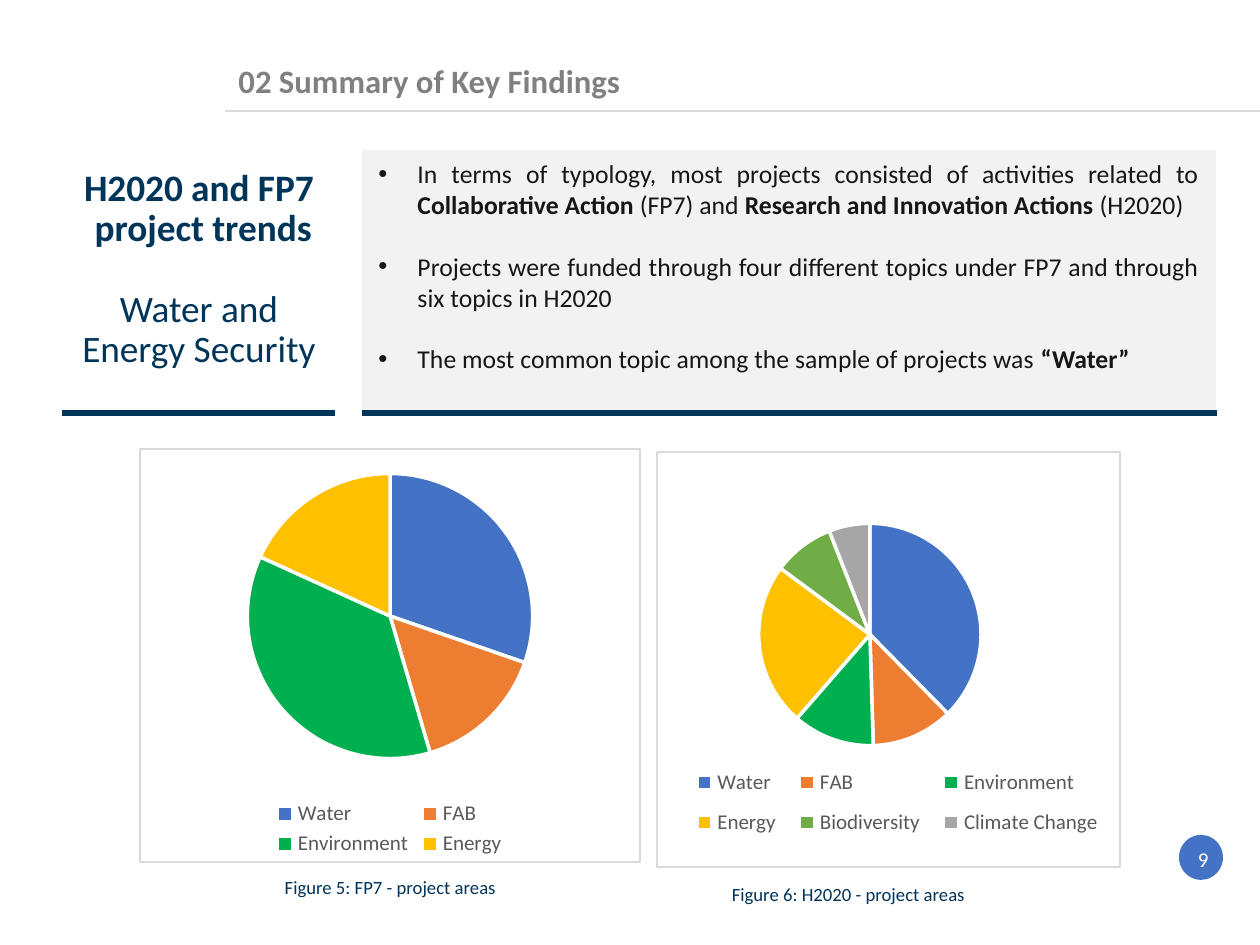
from dataclasses import dataclass

from lxml import etree
from pptx import Presentation
from pptx import util as u
from pptx.chart.data import CategoryChartData
from pptx.dml.color import RGBColor
from pptx.enum import chart as charts, shapes, text
from pptx.oxml import parse_xml
from pptx.oxml.ns import nsdecls, qn

EMU_PER_PX = 914400 / 168


@dataclass(frozen=True)
class Theme:
    font: str = "Calibri"
    navy: str = "00355A"
    caption_ink: str = "00345A"
    heading_ink: str = "808080"
    body_ink: str = "171616"
    legend_ink: str = "595959"
    panel: str = "F2F2F2"
    hairline: str = "D9D9D9"
    white: str = "FFFFFF"
    badge: str = "4472C4"
    slices: tuple = ("4472C4", "ED7D31", "00B050", "FFC000", "70AD47", "A6A6A6")
    heading_size: int = 14
    topic_size: int = 16
    body_size: int = 11
    number_size: int = 9
    legend_size: int = 9
    caption_size: int = 8


def px(length):
    return u.Emu(round(length * EMU_PER_PX))


class SlideBuilder:
    def __init__(self, slide, theme):
        self.slide = slide
        self.theme = theme

    def style(self, font, size, color, bold=False):
        font.name, font.size, font.bold = self.theme.font, u.Pt(size), bold
        font.color.rgb = RGBColor.from_string(color)

    def line(self, x1, y1, x2, y2, color, width):
        rule = self.slide.shapes.add_connector(
            shapes.MSO_CONNECTOR.STRAIGHT, px(x1), px(y1), px(x2), px(y2))
        rule.line.color.rgb = RGBColor.from_string(color)
        rule.line.width = u.Pt(width)
        etree.SubElement(rule._element.spPr, qn("a:effectLst"))

    def shape(self, kind, box, fill):
        shape = self.slide.shapes.add_shape(kind, *map(px, box))
        shape.shadow.inherit = False
        shape.fill.solid()
        shape.fill.fore_color.rgb = RGBColor.from_string(fill)
        shape.line.fill.background()
        return shape

    def label(self, box, paragraphs, size, color, align=text.PP_ALIGN.CENTER,
              anchor=text.MSO_ANCHOR.TOP, spacing=1.0, gap=0):
        """Each paragraph is a (wording, bold) pair."""
        frame = self.slide.shapes.add_textbox(*map(px, box)).text_frame
        frame.word_wrap = True
        frame.vertical_anchor = anchor
        for i, (wording, bold) in enumerate(paragraphs):
            para = frame.add_paragraph() if i else frame.paragraphs[0]
            para.text = wording
            para.alignment, para.line_spacing = align, spacing
            if i:
                para.space_before = u.Pt(gap)
            for run in para.runs:
                self.style(run.font, size, color, bold)

    def bullet_panel(self, box, bullets, gap):
        """Every second piece of a bullet is bold."""
        panel = self.shape(shapes.MSO_SHAPE.RECTANGLE, box, self.theme.panel)
        frame = panel.text_frame
        frame.word_wrap = True
        frame.vertical_anchor = text.MSO_ANCHOR.TOP
        for i, pieces in enumerate(bullets):
            para = frame.add_paragraph() if i else frame.paragraphs[0]
            para.alignment = text.PP_ALIGN.JUSTIFY
            if i:
                para.space_before = u.Pt(gap)
            props = para._p.get_or_add_pPr()
            props.set("marL", str(px(39)))
            props.set("indent", str(-px(39)))
            etree.SubElement(props, qn("a:buFont")).set("typeface", "Arial")
            etree.SubElement(props, qn("a:buChar")).set("char", "•")
            self.style(para.font, self.theme.body_size, self.theme.body_ink)
            for j, piece in enumerate(pieces):
                run = para.add_run()
                run.text = piece
                self.style(run.font, self.theme.body_size, self.theme.body_ink, j % 2 == 1)

    def place(self, part, area, index, target=""):
        """Fix a chart part at fractions (x, y, w, h) of the chart."""
        for old in part.findall(qn("c:layout")):
            part.remove(old)
        sizes = "".join(f'<c:{k} val="{v}"/>' for k, v in zip("xywh", area))
        part.insert(index, parse_xml(
            f'<c:layout {nsdecls("c")}><c:manualLayout>{target}'
            f'<c:xMode val="edge"/><c:yMode val="edge"/>{sizes}'
            '</c:manualLayout></c:layout>'))

    def pie(self, box, shares, plot_area, legend_area):
        theme = self.theme
        data = CategoryChartData()
        data.categories = list(shares)
        data.add_series("Series 1", list(shares.values()))
        chart = self.slide.shapes.add_chart(
            charts.XL_CHART_TYPE.PIE, *map(px, box), data).chart
        chart.has_title = False
        self.style(chart.font, theme.legend_size, theme.legend_ink)
        for i, color in enumerate(theme.slices[:len(shares)]):
            wedge = chart.plots[0].series[0].points[i].format
            wedge.fill.solid()
            wedge.fill.fore_color.rgb = RGBColor.from_string(color)
            wedge.line.color.rgb = RGBColor.from_string(theme.white)
            wedge.line.width = u.Pt(1.5)

        chart.has_legend = True
        legend = chart.legend
        legend.position = charts.XL_LEGEND_POSITION.BOTTOM
        legend.include_in_layout = False
        self.style(legend.font, theme.legend_size, theme.legend_ink)
        self.place(legend._element, legend_area, 1)
        self.place(chart._chartSpace.chart.plotArea, plot_area, 0,
                   '<c:layoutTarget val="inner"/>')

        # Frame round the chart
        chart._chartSpace.find(qn("c:txPr")).addprevious(parse_xml(
            f'<c:spPr {nsdecls("c", "a")}>'
            f'<a:solidFill><a:srgbClr val="{theme.white}"/></a:solidFill>'
            f'<a:ln w="{u.Pt(0.75)}"><a:solidFill><a:srgbClr val="{theme.hairline}"/>'
            '</a:solidFill></a:ln></c:spPr>'))


def main():
    theme = Theme()
    deck = Presentation()
    deck.slide_width, deck.slide_height = px(1260), px(945)
    page = SlideBuilder(deck.slides.add_slide(deck.slide_layouts[6]), theme)

    # Heading
    page.line(225, 111, 1260, 111, theme.hairline, 0.5)
    page.label((222, 58, 592, 50), [("02 Summary of Key Findings", True)],
               theme.heading_size, theme.heading_ink, text.PP_ALIGN.LEFT,
               text.MSO_ANCHOR.MIDDLE, spacing=0.9)

    # Topic and findings
    page.label((53, 161, 292, 230),
               [("H2020 and FP7\v project trends", True), ("Water and Energy Security", False)],
               theme.topic_size, theme.navy, spacing=0.9, gap=17.4)
    page.bullet_panel((362, 150, 854, 265), [
        ("In terms of typology, most projects consisted of activities related to ",
         "Collaborative Action ", "(FP7) and ",
         "Research and Innovation Actions ", "(H2020)"),
        ("Projects were funded through four different topics under FP7 "
         "and through six topics in H2020",),
        ("The most common topic among the sample of projects was ", "“Water”"),
    ], gap=13.2)
    for left, right in ((62, 335), (362, 1217)):
        page.line(left, 413, right, 413, theme.navy, 2.25)

    # Project areas
    page.pie((139, 448, 502, 415),
             {"Water": 30, "FAB": 15, "Environment": 36, "Energy": 18},
             (0.21, 0.06, 0.58, 0.69), (0.26, 0.84, 0.48, 0.16))
    page.pie((656, 451, 465, 417),
             {"Water": 38, "FAB": 12, "Environment": 12, "Energy": 24,
              "Biodiversity": 9, "Climate Change": 6},
             (0.22, 0.17, 0.48, 0.54), (0.05, 0.73, 0.94, 0.23))
    for left, top, caption in ((94, 868, "Figure 5: FP7 - project areas"),
                               (552, 875, "Figure 6: H2020 - project areas")):
        page.label((left, top, 593, 40), [(caption, False)],
                   theme.caption_size, theme.caption_ink)

    # Page number
    page.shape(shapes.MSO_SHAPE.OVAL, (1179, 835, 44, 45), theme.badge)
    page.label((941, 834, 284, 50), [("9", False)], theme.number_size, theme.white,
               text.PP_ALIGN.RIGHT, text.MSO_ANCHOR.MIDDLE)

    deck.save("out.pptx")


if __name__ == "__main__":
    main()
